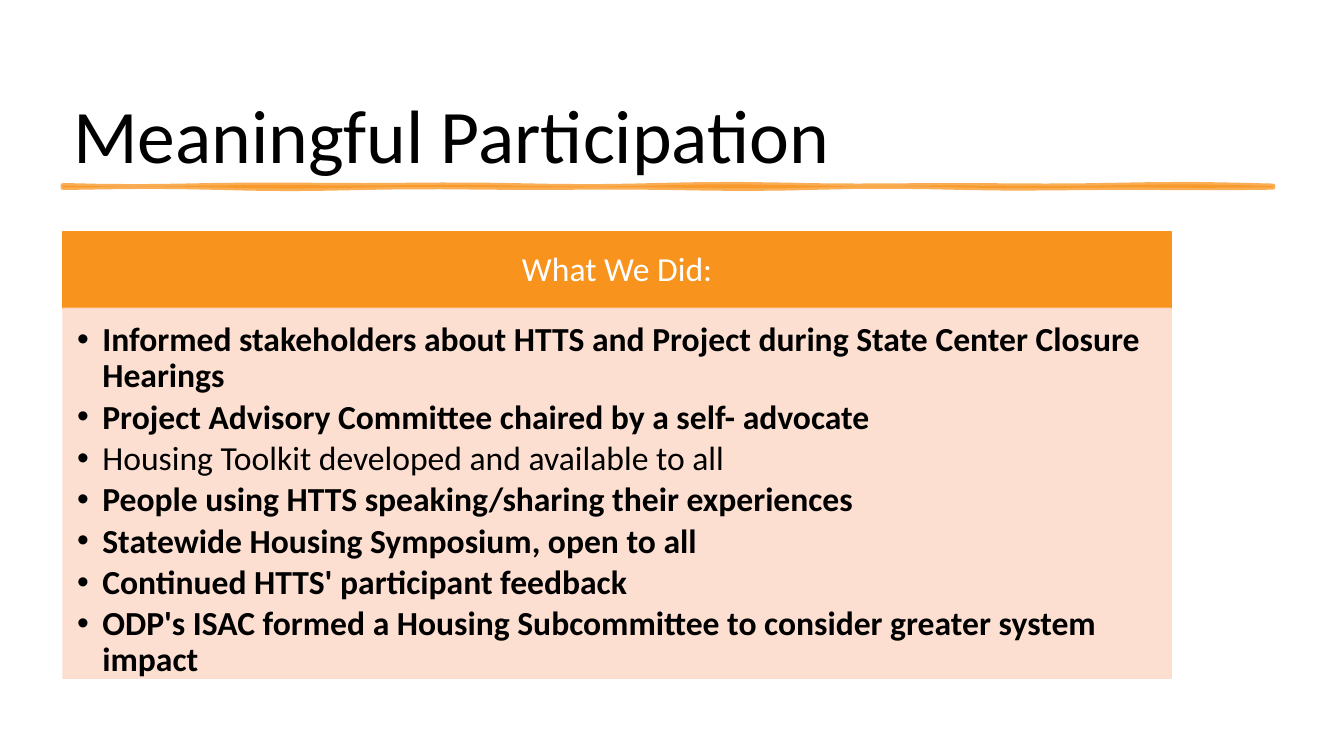
import math

import pptx
import pptx.dml.color
import pptx.enum.shapes
import pptx.enum.text
import pptx.oxml
import pptx.oxml.ns
import pptx.util

Inches, Pt = pptx.util.Inches, pptx.util.Pt
Anchor, Align = pptx.enum.text.MSO_ANCHOR, pptx.enum.text.PP_ALIGN

WIDTH, HEIGHT = 13.33, 7.5
MARGIN = 0.625
ORANGE, PEACH, BLACK, WHITE = "F8931D", "FCDCCD", "000000", "FFFFFF"
FONT = "Calibri"
ACTIONS = [
    ("Informed stakeholders about HTTS and Project during State Center Closure Hearings", True),
    ("Project Advisory Committee chaired by a self- advocate", True),
    ("Housing Toolkit developed and available to all", False),
    ("People using HTTS speaking/sharing their experiences", True),
    ("Statewide Housing Symposium, open to all", True),
    ("Continued HTTS' participant feedback", True),
    ("ODP's ISAC formed a Housing Subcommittee to consider greater system impact", True),
]


def color(hex_string):
    return pptx.dml.color.RGBColor.from_string(hex_string)


def set_attributes(target, values):
    for name, value in values.items():
        setattr(target, name, value)


def paint(shape, hex_string, line_width, opacity=100):
    """Give fill and line one colour and one opacity in percent."""
    shape.shadow.inherit = False
    shape.line.width = Pt(line_width)
    for fill in (shape.fill, shape.line.fill):
        fill.solid()
        fill.fore_color.rgb = color(hex_string)
    if opacity < 100:
        for element in shape._element.spPr.iter(pptx.oxml.ns.qn("a:srgbClr")):
            element.append(pptx.oxml.parse_xml(
                f'<a:alpha {pptx.oxml.ns.nsdecls("a")} val="{opacity * 1000}"/>'))


def format_paragraph(paragraph, size, hex_string, bold=False, **values):
    set_attributes(paragraph, {"line_spacing": 0.9, **values})
    set_attributes(paragraph.font, {"name": FONT, "size": Pt(size), "bold": bold})
    paragraph.font.color.rgb = color(hex_string)


def format_frame(frame, anchor, insets):
    """Insets are left, top, right and bottom, in inches."""
    set_attributes(frame, {"word_wrap": True, "vertical_anchor": anchor,
                           "auto_size": pptx.enum.text.MSO_AUTO_SIZE.NONE})
    sides = ("margin_left", "margin_top", "margin_right", "margin_bottom")
    set_attributes(frame, dict(zip(sides, map(Inches, insets))))


def place_title(slide, left, top, width, height):
    title = slide.shapes.title
    set_attributes(title, {"left": Inches(left), "top": Inches(top),
                           "width": Inches(width), "height": Inches(height)})
    title.text_frame.text = "Meaningful Participation"
    format_frame(title.text_frame, Anchor.BOTTOM, (0.1, 0.05, 0.1, 0.05))
    format_paragraph(title.text_frame.paragraphs[0], 54, BLACK, alignment=Align.LEFT)


def add_brush_stroke(slide, left, top, width, height):
    """Draw a thin band whose two long edges waver like a hand-drawn line."""
    steps = 32

    def edge(base, phase):
        return [(Inches(left + width * step / steps),
                 Inches(base + 0.006 * (math.sin(step + phase) + math.sin(0.6 * step + 2 * phase))))
                for step in range(steps + 1)]

    points = edge(top, 0) + edge(top + height, 2)[::-1]
    builder = slide.shapes.build_freeform(*points[0])
    builder.add_line_segments(points[1:], close=True)
    paint(builder.convert_to_shape(), ORANGE, 3.5, 75)


def add_panel(slide, box, hex_string, opacity, anchor, insets):
    panel = slide.shapes.add_shape(pptx.enum.shapes.MSO_SHAPE.RECTANGLE, *map(Inches, box))
    paint(panel, hex_string, 1, opacity)
    format_frame(panel.text_frame, anchor, insets)
    return panel.text_frame


def add_bullet(paragraph, indent):
    properties = paragraph._p.get_or_add_pPr()
    properties.set("marL", str(Inches(indent)))
    properties.set("indent", str(-Inches(indent)))
    namespace = pptx.oxml.ns.nsdecls("a")
    for bullet in ('buFont {} typeface="Arial"', 'buChar {} char="•"'):
        properties.append(pptx.oxml.parse_xml(f"<a:{bullet.format(namespace)}/>"))


def add_action_card(slide, left, top, width, height):
    header_height = 0.76
    header = add_panel(slide, (left, top, width, header_height), ORANGE, 100,
                       Anchor.MIDDLE, (0.19, 0.11, 0.19, 0.11))
    header.text = "What We Did:"
    format_paragraph(header.paragraphs[0], 24, WHITE, alignment=Align.CENTER)

    body = add_panel(slide, (left, top + header_height, width, height - header_height),
                     PEACH, 90, Anchor.TOP, (0.14, 0.14, 0.19, 0.21))
    for index, (action, bold) in enumerate(ACTIONS):
        paragraph = body.add_paragraph() if index else body.paragraphs[0]
        paragraph.text = action
        add_bullet(paragraph, 0.25)
        format_paragraph(paragraph, 24, BLACK, bold, alignment=Align.LEFT,
                         level=1, space_after=Pt(3.6))


def main():
    presentation = pptx.Presentation()
    set_attributes(presentation, {"slide_width": Inches(WIDTH), "slide_height": Inches(HEIGHT)})
    slide = presentation.slides.add_slide(presentation.slide_layouts[5])
    place_title(slide, MARGIN, 0.26, 12.05, 1.57)
    add_brush_stroke(slide, MARGIN, 1.84, 12, 0.02)
    add_action_card(slide, MARGIN, 2.3, 10.99, 4.43)
    presentation.save("out.pptx")


if __name__ == "__main__":
    main()
